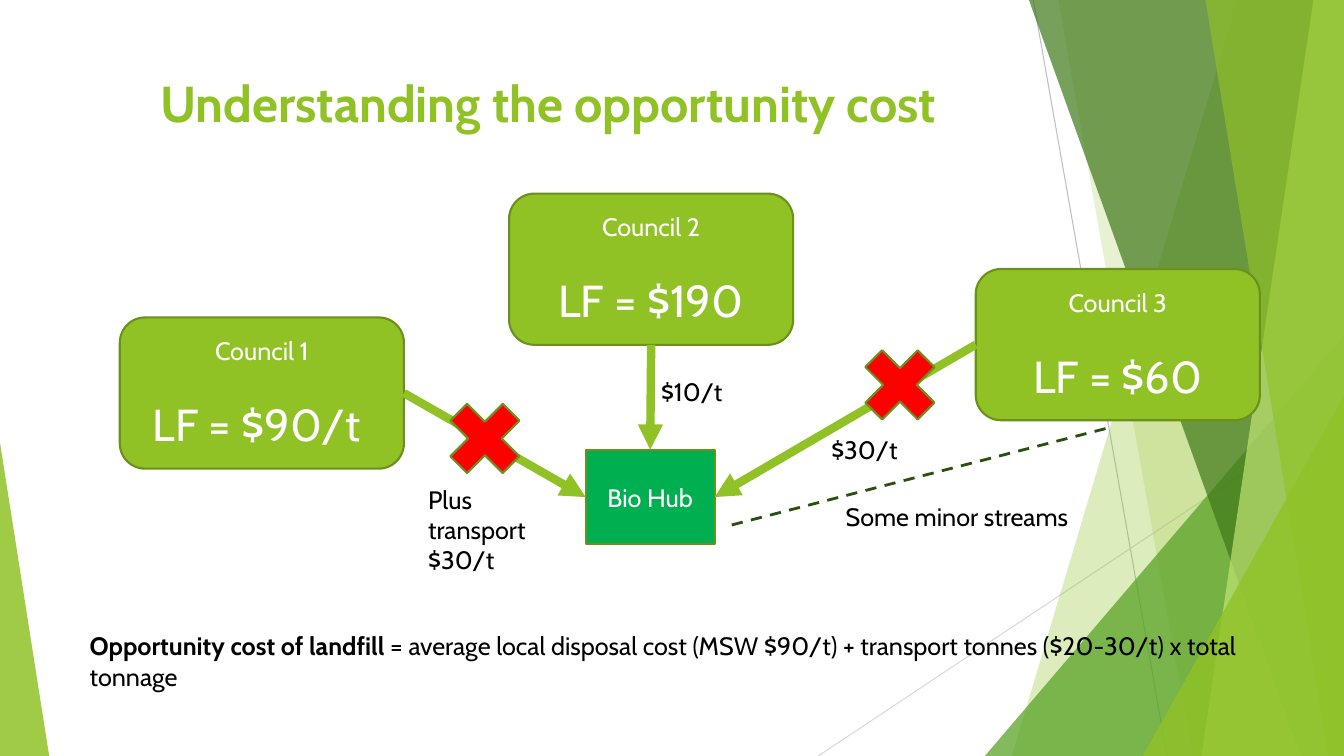
from lxml.etree import SubElement
from pptx import Presentation
from pptx.dml.color import RGBColor
from pptx.enum.dml import MSO_LINE_DASH_STYLE as Dash
from pptx.enum.shapes import MSO_CONNECTOR as Connector, MSO_SHAPE as Shape
from pptx.enum.text import MSO_ANCHOR as Anchor, PP_ALIGN as Align
from pptx.oxml.ns import qn
from pptx.util import Cm, Pt

LIME = RGBColor(0x90, 0xC2, 0x26)
LEAF = RGBColor(0x54, 0xA0, 0x21)
FOREST = RGBColor(0x3F, 0x78, 0x19)
PALE_LIME = RGBColor(0xC0, 0xE4, 0x74)
OLIVE = RGBColor(0x6B, 0x90, 0x1C)
DARK_GREEN = RGBColor(0x2A, 0x50, 0x10)
HUB_GREEN = RGBColor(0x00, 0xB0, 0x50)
RED = RGBColor(0xFF, 0x00, 0x00)
GREY = RGBColor(0xBF, 0xBF, 0xBF)
LIGHT_GREY = RGBColor(0xD9, 0xD9, 0xD9)
WHITE = RGBColor(0xFF, 0xFF, 0xFF)
BLACK = RGBColor(0x00, 0x00, 0x00)

WIDTH, HEIGHT = 33.87, 19.05
TOP, LEFT, BOTTOM, RIGHT = range(4)  # connection sites


class Sketch:
    """Draws styled elements on one page; all lengths are in centimetres."""

    font = "Cabin"
    size = 18

    def __init__(self, page):
        self.shapes = page.shapes

    def tint(self, shape, color, opacity):
        """Fill a decorative shape with a see-through colour and no outline."""
        shape.shadow.inherit = False
        shape.line.fill.background()
        shape.fill.solid()
        shape.fill.fore_color.rgb = color
        color_node = shape._element.spPr.find(qn("a:solidFill"))[0]
        SubElement(color_node, qn("a:alpha"), val=str(opacity * 1000))

    def band(self, top_x, bottom_x, color, opacity):
        """Fill the page from a slanted edge to the right border."""
        builder = self.shapes.build_freeform(Cm(top_x), 0)
        corners = [(WIDTH, 0), (WIDTH, HEIGHT), (bottom_x, HEIGHT)]
        builder.add_line_segments([(Cm(x), Cm(y)) for x, y in corners])
        self.tint(builder.convert_to_shape(), color, opacity)

    def wedge(self, left, top, width, peak, color, opacity):
        """Stand a triangle on the bottom edge, its tip at a share of the width."""
        shape = self.shapes.add_shape(
            Shape.ISOSCELES_TRIANGLE, Cm(left), Cm(top), Cm(width), Cm(HEIGHT - top))
        shape.adjustments[0] = peak
        self.tint(shape, color, opacity)

    def line(self, start, end, color, weight, dash=None):
        line = self.shapes.add_connector(
            Connector.STRAIGHT, *(Cm(value) for value in start + end))
        line.line.color.rgb = color
        line.line.width = Pt(weight)
        if dash:
            line.line.dash_style = dash
        SubElement(line._element.spPr, qn("a:effectLst"))
        return line

    def arrow(self, source, source_site, target, target_site):
        arrow = self.line((0, 0), (1, 1), LIME, 6)
        arrow.begin_connect(source, source_site)
        arrow.end_connect(target, target_site)
        outline = arrow._element.spPr.find(qn("a:ln"))
        SubElement(outline, qn("a:tailEnd"), type="triangle")

    def node(self, kind, left, top, width, height, color):
        shape = self.shapes.add_shape(kind, Cm(left), Cm(top), Cm(width), Cm(height))
        shape.shadow.inherit = False
        shape.fill.solid()
        shape.fill.fore_color.rgb = color
        shape.line.color.rgb = OLIVE
        shape.line.width = Pt(1.5)
        shape.text_frame.vertical_anchor = Anchor.MIDDLE
        return shape

    def add_text(self, para, text, color, size=None, bold=False, align=Align.LEFT):
        para.alignment = align
        span = para.add_run()
        span.text = text
        span.font.name = self.font
        span.font.size = Pt(size or self.size)
        span.font.bold = bold
        span.font.color.rgb = color

    def council(self, name, cost, left, top):
        shape = self.node(Shape.FLOWCHART_ALTERNATE_PROCESS, left, top, 7.16, 3.81, LIME)
        frame = shape.text_frame
        self.add_text(frame.paragraphs[0], name, WHITE, align=Align.CENTER)
        para = frame.add_paragraph()
        para.space_before = Pt(22)
        self.add_text(para, cost, WHITE, 32, align=Align.CENTER)
        return shape

    def text_box(self, left, top, width, height=1.02, wrap=True):
        box = self.shapes.add_textbox(Cm(left), Cm(top), Cm(width), Cm(height))
        box.text_frame.word_wrap = wrap
        return box.text_frame.paragraphs[0]


def draw_background(sketch):
    sketch.line((26.04, 0), (29.41, HEIGHT), GREY, 0.75)
    sketch.line((WIDTH, 10.24), (20.62, HEIGHT), LIGHT_GREY, 0.75)
    sketch.band(31.19, 25.5, LIME, 30)
    sketch.band(26.67, 30.05, LIME, 20)
    sketch.wedge(24.82, 8.46, 9.05, 1, LEAF, 72)
    sketch.band(25.93, 32.79, FOREST, 70)
    sketch.band(33.1, 30.28, PALE_LIME, 70)
    sketch.band(30.38, 33.48, LIME, 65)
    sketch.wedge(28.8, 9.98, 5.07, 1, LIME, 80)
    sketch.wedge(0, 11.15, 1.24, 0, LIME, 85)


def draw_flow(sketch):
    council_3 = sketch.council("Council 3", "LF = $60", 24.59, 6.78)
    council_2 = sketch.council("Council 2", "LF = $190", 12.83, 4.88)
    council_1 = sketch.council("Council 1", "LF = $90/t ", 3.02, 8)
    hub = sketch.node(Shape.FLOWCHART_PROCESS, 14.76, 11.33, 3.25, 2.39, HUB_GREEN)
    sketch.add_text(hub.text_frame.paragraphs[0], "Bio Hub", WHITE, align=Align.CENTER)

    sketch.arrow(council_1, RIGHT, hub, LEFT)
    sketch.arrow(council_2, BOTTOM, hub, TOP)
    sketch.arrow(council_3, LEFT, hub, RIGHT)
    for left, top in [(10.95, 9.78), (21.41, 8.43)]:
        sketch.node(Shape.MATH_MULTIPLY, left, top, 2.54, 2.54, RED)
    sketch.line((27.86, 10.8), (18.24, 13.28), DARK_GREEN, 2, Dash.DASH)


def draw_text(sketch):
    title = sketch.text_box(1.88, 1.7, 23.88, 3.66)
    sketch.add_text(title, "Understanding the opportunity cost", LIME, 36, True, Align.CENTER)

    sketch.add_text(sketch.text_box(10.54, 12.07, 4.04, 2.57), "Plus transport $30/t", BLACK)
    sketch.add_text(sketch.text_box(16.41, 9.37, 2.79), "$10/t", BLACK)
    sketch.add_text(sketch.text_box(20.7, 10.82, 3.56), "$30/t", BLACK)
    sketch.add_text(sketch.text_box(21.06, 12.52, 6.32, wrap=False), "Some minor streams", BLACK)

    formula = sketch.text_box(2.01, 15.77, 31.57)
    sketch.add_text(formula, "Opportunity cost of landfill", BLACK, bold=True)
    sketch.add_text(formula, " = average local disposal cost (MSW $90/t) + transport tonnes "
                    "($20-30/t) x total tonnage", BLACK)


def main():
    deck = Presentation()
    deck.slide_width, deck.slide_height = Cm(WIDTH), Cm(HEIGHT)
    sketch = Sketch(deck.slides.add_slide(deck.slide_layouts[6]))
    draw_background(sketch)
    draw_flow(sketch)
    draw_text(sketch)
    deck.save("out.pptx")


if __name__ == "__main__":
    main()
